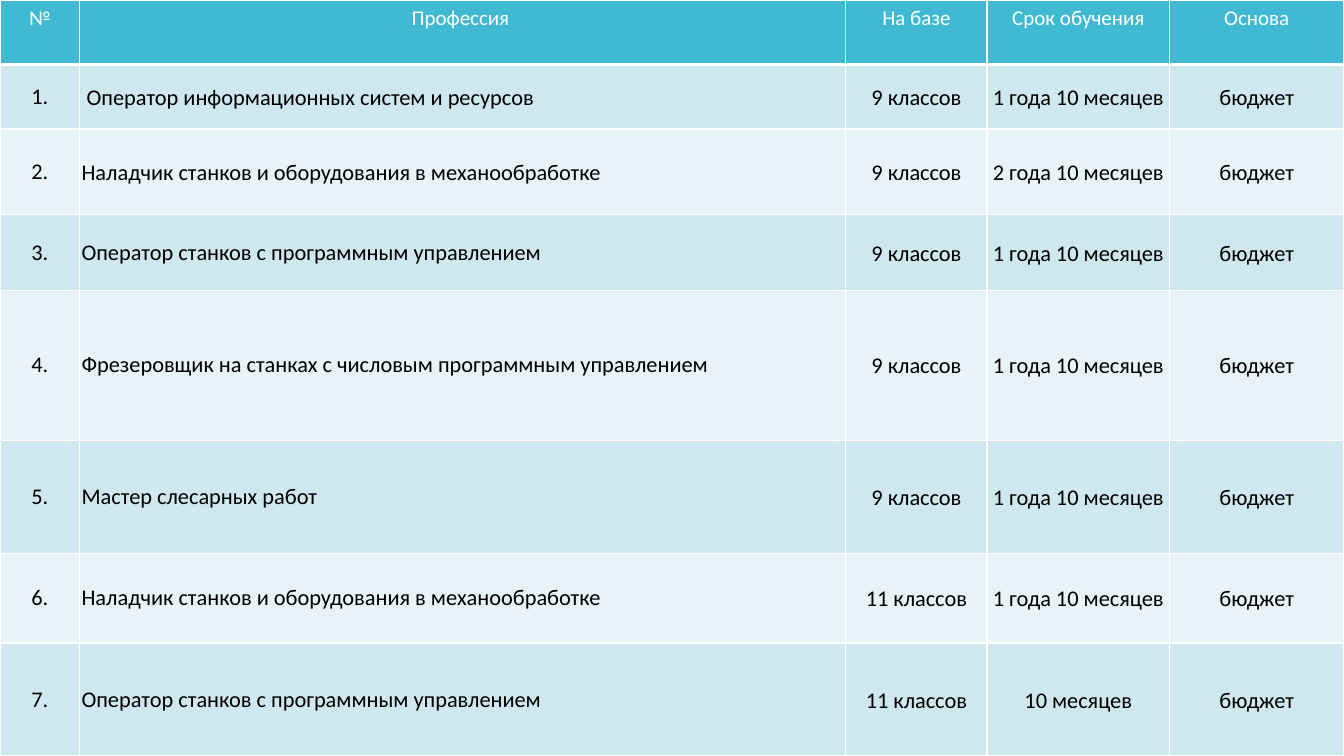
from dataclasses import dataclass
from lxml.etree import SubElement
from pptx import Presentation
from pptx.dml.color import RGBColor as RGB
from pptx.enum.text import MSO_ANCHOR as Anchor, PP_ALIGN as Align
from pptx.oxml.ns import qn
from pptx.util import Inches, Pt

HEADS = ["№", "Профессия ", "На базе", "Срок обучения", "Основа"]
JOBS = [
    (" Оператор информационных систем и ресурсов", "9 классов", "1 года 10 месяцев"),
    ("Наладчик станков и оборудования в механообработке", "9 классов", "2 года 10 месяцев"),
    ("Оператор станков с программным управлением", "9 классов", "1 года 10 месяцев"),
    ("Фрезеровщик на станках с числовым программным управлением", "9 классов", "1 года 10 месяцев"),
    ("Мастер слесарных работ", "9 классов", "1 года 10 месяцев"),
    ("Наладчик станков и оборудования в механообработке", "11 классов", "1 года 10 месяцев"),
    ("Оператор станков с программным управлением", "11 классов", "10 месяцев"),
]
BASIS = "бюджет"
WIDE, HIGH = 13.33, 7.5
COLS = [0.79, 7.6, 1.4, 1.81, 1.73]
ROWS = [0.64, 0.64, 0.85, 0.75, 1.49, 1.12, 0.89, 1.12]
LOOSE = 2  # job names down to this row have wider line spacing


@dataclass(frozen=True)
class Theme:
    font: str = "Calibri"
    head: str = "40BAD2"
    bands: tuple = ("E8F3F7", "CFE7EE")
    light: str = "FFFFFF"
    dark: str = "000000"
    head_size: int = 15
    body_size: int = 16
    rule: int = 1
    thick: int = 3


THEME = Theme()


def edge(cell, side, width):
    """Draw one border of a cell; side is L, R, T or B."""
    line = SubElement(cell._tc.get_or_add_tcPr(), qn(f"a:ln{side}"), w=str(Pt(width)))
    fill = SubElement(line, qn("a:solidFill"))
    SubElement(fill, qn("a:srgbClr"), val=THEME.light)


def inset(cell, gap):
    cell.margin_left = cell.margin_right = Inches(gap)
    cell.margin_top = cell.margin_bottom = Inches(gap)


def write(cell, text, row, col):
    head = row == 0
    para = cell.text_frame.paragraphs[0]
    para.alignment = Align.LEFT if col == 1 and not head else Align.CENTER
    if not head:
        cell.vertical_anchor = Anchor.MIDDLE
        if col:
            inset(cell, 0.02 if col == 1 else 0)
        if col > 1 or (col == 1 and row <= LOOSE):
            para.line_spacing = 1.07
            para.space_after = Pt(8)
    run = para.add_run()
    run.text = text
    font = run.font
    font.name = THEME.font
    font.bold = False
    font.size = Pt(THEME.head_size if head else THEME.body_size)
    font.color.rgb = RGB.from_string(THEME.light if head else THEME.dark)


def paint(cell, row):
    for side in "LRTB":
        edge(cell, side, THEME.thick if row == 0 and side == "B" else THEME.rule)
    cell.fill.solid()
    tint = THEME.bands[row % 2] if row else THEME.head
    cell.fill.fore_color.rgb = RGB.from_string(tint)


def main():
    deck = Presentation()
    deck.slide_width, deck.slide_height = Inches(WIDE), Inches(HIGH)
    slide = deck.slides.add_slide(deck.slide_layouts[6])
    lines = [HEADS] + [(f"{n}.", *job, BASIS) for n, job in enumerate(JOBS, 1)]
    table = slide.shapes.add_table(
        len(ROWS), len(COLS), 0, 0, Inches(WIDE), Inches(HIGH)).table
    for col, width in zip(table.columns, COLS):
        col.width = Inches(width)
    for r, (high, line) in enumerate(zip(ROWS, lines)):
        table.rows[r].height = Inches(high)
        for c, text in enumerate(line):
            cell = table.cell(r, c)
            write(cell, text, r, c)
            paint(cell, r)
    deck.save("out.pptx")


if __name__ == "__main__":
    main()
